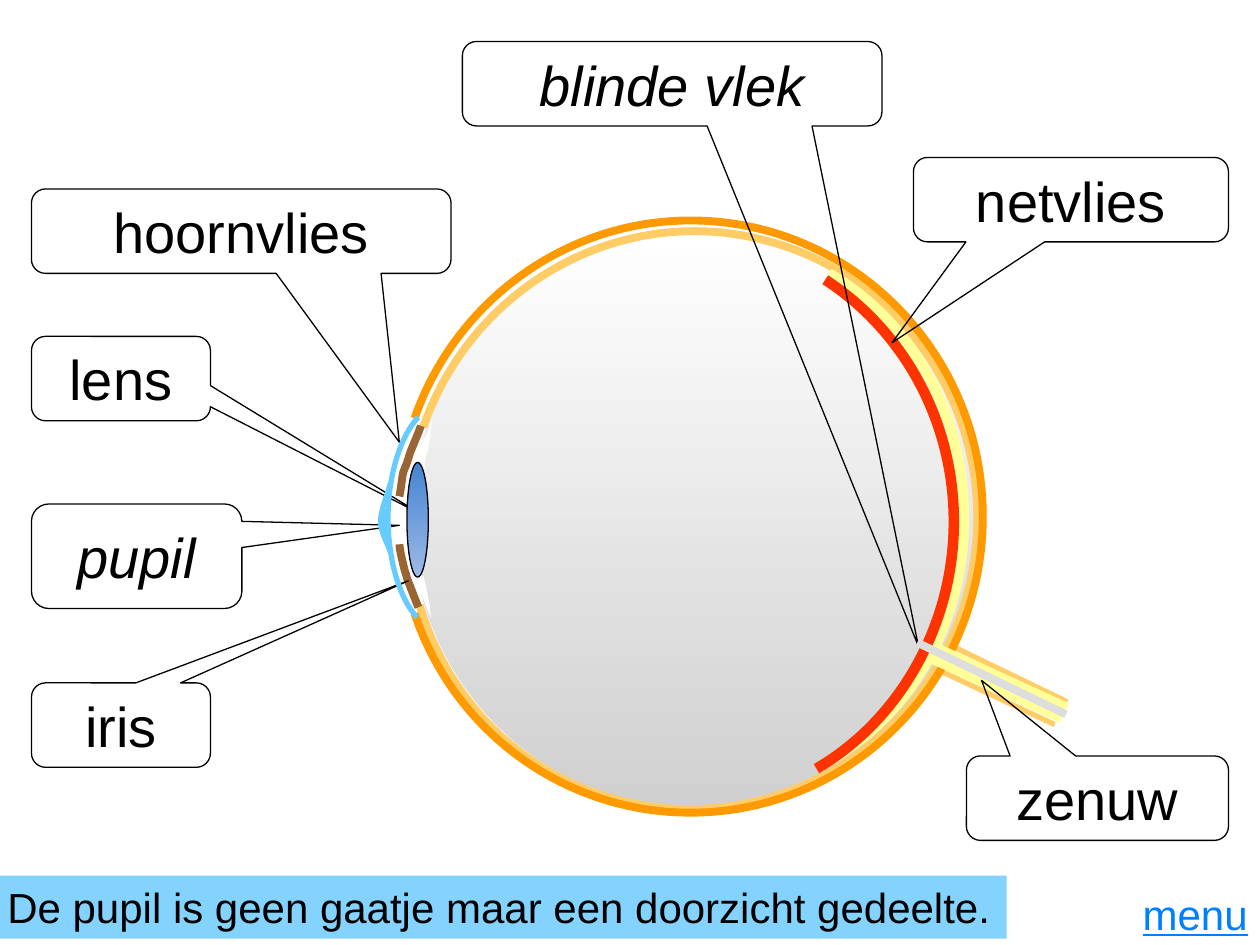
import pptx
import pptx.dml.color
import pptx.enum.shapes
import pptx.enum.text
import pptx.oxml.ns
import pptx.util
from lxml import etree
from pptx.util import Inches

COLORS = {
    "white": "FFFFFF", "grey": "D0D0D0", "choroid": "FFCC66", "sclera": "FF9900",
    "nerve": "DDDDDD", "sheath": "FFFF99", "retina": "FF3300", "iris": "996633",
    "cornea": "66CCFF", "lens_top": "4584D3", "lens_bottom": "9DB9E8",
    "black": "000000", "link": "0080FF", "bar": "83D3FE",
}
RGB = {name: pptx.dml.color.RGBColor.from_string(value) for name, value in COLORS.items()}
SHAPE = pptx.enum.shapes.MSO_SHAPE
ALIGN = pptx.enum.text.PP_ALIGN

presentation = pptx.Presentation()
presentation.slide_width = Inches(10)
presentation.slide_height = Inches(7.5)
slide = presentation.slides.add_slide(presentation.slide_layouts[6])
shapes = slide.shapes


def add_stroke(color, width, points):
    """Draw a straight line (two points) or a chain of cubic Bézier curves."""
    points = [(Inches(x), Inches(y)) for x, y in points]
    if len(points) == 2:
        stroke = shapes.add_connector(
            pptx.enum.shapes.MSO_CONNECTOR.STRAIGHT, *points[0], *points[1])
        etree.SubElement(stroke._element.spPr, pptx.oxml.ns.qn("a:effectLst"))
    else:
        builder = shapes.build_freeform(*points[0])
        builder.add_line_segments(points[1:], close=False)
        stroke = builder.convert_to_shape()
        # Every three line segments become the control points of one curve
        segments = stroke._element.findall(".//" + pptx.oxml.ns.qn("a:lnTo"))
        for first in range(0, len(segments), 3):
            curve = etree.Element(pptx.oxml.ns.qn("a:cubicBezTo"))
            segments[first].addprevious(curve)
            for segment in segments[first:first + 3]:
                curve.append(segment[0])
                segment.getparent().remove(segment)
        stroke.fill.background()
        stroke.shadow.inherit = False
    stroke.line.color.rgb = RGB[color]
    stroke.line.width = pptx.util.Pt(width)


def add_gradient_oval(left, top, width, height, top_color, bottom_color):
    oval = shapes.add_shape(
        SHAPE.OVAL, Inches(left), Inches(top), Inches(width), Inches(height))
    oval.shadow.inherit = False
    oval.fill.gradient()
    oval.fill.gradient_angle = 270
    for stop, position, color in zip(oval.fill.gradient_stops, (0, 1), (top_color, bottom_color)):
        stop.position = position
        stop.color.rgb = RGB[color]
    oval.line.fill.background()
    return oval


# Eyeball, with white patches beside the iris
add_gradient_oval(3.27, 1.83, 4.5, 4.58, "white", "grey")
for corners in (
    [(3.43, 3.33), (3.4, 3.56), (3.37, 3.66), (3.37, 3.72), (3.36, 3.69),
     (3.36, 3.68), (3.3, 3.66), (3.32, 3.62), (3.33, 3.56), (3.39, 3.44)],
    [(3.42, 4.91), (3.34, 4.7), (3.32, 4.65), (3.31, 4.61), (3.28, 4.55), (3.31, 4.56),
     (3.32, 4.58), (3.36, 4.57), (3.37, 4.61), (3.38, 4.65), (3.41, 4.8)],
):
    corners = [(Inches(x), Inches(y)) for x, y in corners]
    builder = shapes.build_freeform(*corners[0])
    builder.add_line_segments(corners[1:], close=True)
    patch = builder.convert_to_shape()
    patch.fill.solid()
    patch.fill.fore_color.rgb = RGB["white"]
    patch.line.fill.background()
    patch.shadow.inherit = False

# Layers of the eye wall and the optic nerve
for color, width, points in (
    ("choroid", 4.5, [(3.36, 3.39), (3.75, 2.27), (4.91, 1.62), (6.04, 1.9),
                      (7.25, 2.19), (7.99, 3.43), (7.69, 4.66),
                      (7.39, 5.9), (6.16, 6.65), (4.95, 6.36),
                      (4.17, 6.17), (3.56, 5.58), (3.33, 4.8)]),
    ("choroid", 3, [(7.41, 5.3), (8.37, 5.75)]),
    ("choroid", 3, [(7.52, 5.11), (8.47, 5.57)]),
    ("sclera", 4.5, [(3.29, 3.32), (3.62, 2.38), (4.5, 1.75), (5.48, 1.75),
                     (6.76, 1.75), (7.8, 2.8), (7.8, 4.1),
                     (7.8, 5.4), (6.76, 6.45), (5.48, 6.45),
                     (4.49, 6.45), (3.61, 5.82), (3.29, 4.87)]),
    ("nerve", 3, [(7.23, 5.08), (8.41, 5.65)]),
    ("nerve", 4.5, [(7.28, 5.1), (8.44, 5.65)]),
    ("sheath", 6, [(6.58, 2.17), (7.24, 2.55), (7.65, 3.29), (7.65, 4.1),
                   (7.66, 4.92), (7.24, 5.67), (6.56, 6.05)]),
):
    add_stroke(color, width, points)

nerve_sheath = shapes.add_shape(
    SHAPE.RECTANGLE, Inches(7.33), Inches(5.33), Inches(1.17), Inches(0.17))
nerve_sheath.rotation = 24.6
nerve_sheath.fill.solid()
nerve_sheath.fill.fore_color.rgb = RGB["sheath"]
nerve_sheath.line.fill.background()
nerve_sheath.shadow.inherit = False

for color, width, points in (
    ("retina", 6, [(6.55, 2.22), (7.18, 2.63), (7.57, 3.35), (7.57, 4.14),
                   (7.57, 4.95), (7.15, 5.71), (6.48, 6.1)]),
    ("iris", 4.5, [(3.17, 4.32), (3.17, 4.36), (3.2, 4.48), (3.21, 4.52),
                   (3.22, 4.56), (3.22, 4.54), (3.23, 4.59),
                   (3.25, 4.64), (3.3, 4.77), (3.32, 4.82)]),
    ("iris", 4.5, [(3.34, 3.38), (3.33, 3.42), (3.27, 3.55), (3.25, 3.61),
                   (3.23, 3.68), (3.22, 3.7), (3.2, 3.75),
                   (3.19, 3.8), (3.18, 3.9), (3.17, 3.94)]),
):
    add_stroke(color, width, points)

# Callouts: label, left, top, width, height, tip of the pointer, italic
for label, left, top, width, height, (tip_x, tip_y), italic in (
    ("hoornvlies", 0.25, 1.5, 3.33, 0.67, (3.17, 3.51), False),
    ("lens", 0.25, 2.67, 1.42, 0.67, (3.34, 4.08), False),
    ("pupil", 0.25, 4, 1.67, 0.83, (3.17, 4.17), True),
    ("iris", 0.25, 5.42, 1.42, 0.67, (3.24, 4.61), False),
    ("zenuw", 7.67, 6, 2.08, 0.67, (7.79, 5.4), False),
    ("blinde vlek", 3.67, 0.33, 3.33, 0.67, (7.29, 5.13), True),
    ("netvlies", 7.25, 1.25, 2.5, 0.67, (7.08, 2.72), False),
):
    callout = shapes.add_shape(
        SHAPE.ROUNDED_RECTANGULAR_CALLOUT,
        Inches(left), Inches(top), Inches(width), Inches(height))
    callout.adjustments[0] = (tip_x - left) / width - 0.5
    callout.adjustments[1] = (tip_y - top) / height - 0.5
    callout.fill.background()
    callout.line.color.rgb = RGB["black"]
    callout.line.width = pptx.util.Pt(0.75)
    callout.shadow.inherit = False
    callout.text_frame.text = label
    callout.text_frame.vertical_anchor = pptx.enum.text.MSO_ANCHOR.MIDDLE
    paragraph = callout.text_frame.paragraphs[0]
    paragraph.alignment = ALIGN.CENTER
    font = paragraph.runs[0].font
    font.name = "Arial"
    font.size = pptx.util.Pt(32)
    font.italic = italic
    font.color.rgb = RGB["black"]

lens = add_gradient_oval(3.23, 3.67, 0.17, 0.91, "lens_top", "lens_bottom")
lens.line.color.rgb = RGB["black"]
lens.line.width = pptx.util.Pt(0.75)

# Nerve core and cornea
for color, width, points in (
    ("nerve", 4.5, [(7.28, 5.1), (8.46, 5.67)]),
    ("cornea", 3, [(3.32, 3.31), (3.18, 3.46), (3.08, 3.77), (3.08, 4.11),
                   (3.08, 4.44), (3.17, 4.75), (3.31, 4.9)]),
    ("cornea", 3, [(3.1, 3.83), (3.09, 3.88), (3.02, 4.05), (3.02, 4.14),
                   (3.02, 4.23), (3.09, 4.34), (3.1, 4.39)]),
    ("cornea", 3, [(3.06, 4.04), (3.06, 4.27)]),
):
    add_stroke(color, width, points)

# Menu label and explanation bar
menu = shapes.add_textbox(Inches(8.86), Inches(7), Inches(1.14), Inches(0.5))
bar = shapes.add_shape(
    SHAPE.RECTANGLE, Inches(-0.04), Inches(6.95), Inches(8.03), Inches(0.5))
bar.fill.solid()
bar.fill.fore_color.rgb = RGB["bar"]
bar.line.fill.background()
bar.shadow.inherit = False
for shape, text, alignment, color in (
    (menu, "menu", ALIGN.RIGHT, "link"),
    (bar, "De pupil is geen gaatje maar een doorzicht gedeelte.", ALIGN.LEFT, "black"),
):
    shape.text_frame.word_wrap = True
    shape.text_frame.text = text
    paragraph = shape.text_frame.paragraphs[0]
    paragraph.alignment = alignment
    font = paragraph.runs[0].font
    font.name = "Arial"
    font.size = pptx.util.Pt(24)
    font.underline = shape is menu
    font.color.rgb = RGB[color]

presentation.save("out.pptx")
